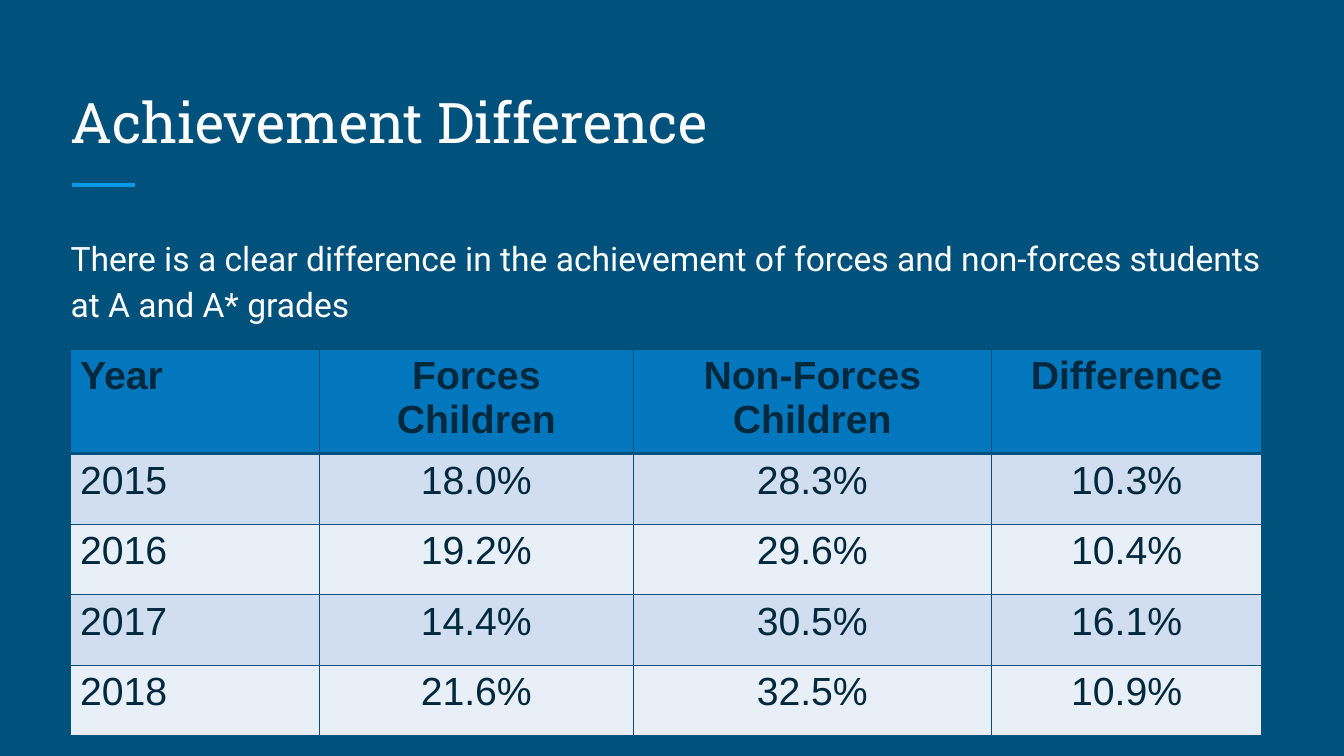
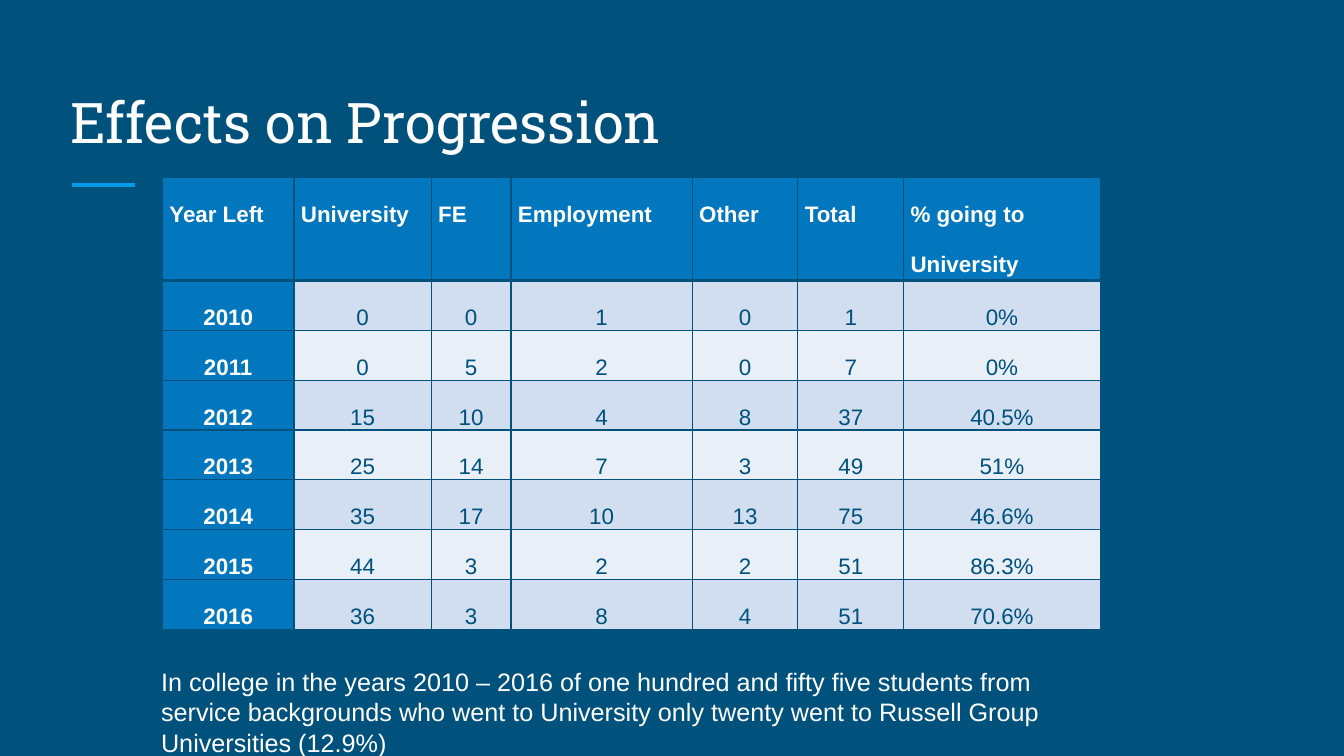
"""Build two slides on forces children: achievement and progression."""
from lxml.etree import SubElement
from pptx import Presentation
from pptx.dml.color import RGBColor
from pptx.enum.shapes import MSO_CONNECTOR
from pptx.enum.text import MSO_ANCHOR, MSO_AUTO_SIZE, PP_ALIGN
from pptx.oxml.ns import qn
from pptx.util import Pt

NAVY = RGBColor(0x00, 0x51, 0x7C)
DARK = RGBColor(0x00, 0x29, 0x3E)
BLUE = RGBColor(0x02, 0x77, 0xBD)
SKY = RGBColor(0x03, 0x9B, 0xE5)
WHITE = RGBColor(0xFF, 0xFF, 0xFF)
BANDS = [RGBColor(0xE9, 0xEF, 0xF7), RGBColor(0xD0, 0xDE, 0xEF)]


def write(frame, text, size=18, font="Arial", color=WHITE, bold=False,
          align=PP_ALIGN.LEFT, space=1.0, inset=None):
    frame.word_wrap = True
    if inset is not None:
        frame.margin_left = frame.margin_right = Pt(inset)
        frame.margin_top = frame.margin_bottom = Pt(inset)
    par = frame.paragraphs[0]
    par.alignment = align
    par.line_spacing = space
    run = par.add_run()
    run.text = text
    run.font.size = Pt(size)
    run.font.name = font
    run.font.bold = bold
    run.font.color.rgb = color


def grid(slide, left, top, widths, heights, rows, ink, head, side, pad, **form):
    shape = slide.shapes.add_table(len(rows), len(widths), Pt(left), Pt(top),
                                   Pt(sum(widths)), Pt(sum(heights)))
    table = shape.table
    table.horz_banding = False
    for col, width in zip(table.columns, widths):
        col.width = Pt(width)
    for r, (row, height) in enumerate(zip(rows, heights)):
        table.rows[r].height = Pt(height)
        for c, text in enumerate(row):
            cell = table.cell(r, c)
            cell.margin_left = cell.margin_right = Pt(pad[0])
            cell.margin_top = cell.margin_bottom = Pt(pad[1])
            props = cell._tc.get_or_add_tcPr()
            for edge in "LRTB":
                thick = (edge, r) in [("B", 0), ("T", 1)]
                line = SubElement(props, qn("a:ln" + edge), w=str(Pt(3 if thick else 1)))
                fill = SubElement(line, qn("a:solidFill"))
                SubElement(fill, qn("a:srgbClr"), val=str(NAVY))
            strong = r == 0 or (side and c == 0)
            cell.fill.solid()
            cell.fill.fore_color.rgb = BLUE if strong else BANDS[r % 2]
            plain = (r == 0) if side else (c == 0)
            write(cell.text_frame, text, color=head if strong else ink, bold=strong,
                  align=PP_ALIGN.LEFT if plain else PP_ALIGN.CENTER, **form)


deck = Presentation()
deck.slide_width, deck.slide_height = Pt(960), Pt(540)
layout = deck.slide_layouts[5]
layout.background.fill.solid()
layout.background.fill.fore_color.rgb = NAVY

slides = []
for name in ["Achievement Difference", "Effects on Progression"]:
    slide = deck.slides.add_slide(layout)
    title = slide.shapes.title
    title.left, title.top, title.width, title.height = Pt(41), Pt(48), Pt(878), Pt(72)
    title.text_frame.auto_size = MSO_AUTO_SIZE.NONE
    title.text_frame.vertical_anchor = MSO_ANCHOR.BOTTOM
    write(title.text_frame, name, size=40, font="Roboto Slab", inset=9.5)
    rule = slide.shapes.add_connector(MSO_CONNECTOR.STRAIGHT, Pt(51.5), Pt(132.3),
                                      Pt(96.5), Pt(132.3))
    rule.line.color.rgb = SKY
    rule.line.width = Pt(3)
    SubElement(rule._element.spPr, qn("a:effectLst"))
    slides.append(slide)
grades, leavers = slides

intro = grades.shapes.add_textbox(Pt(41), Pt(156), Pt(878), Pt(323))
write(intro.text_frame, "There is a clear difference in the achievement of forces and "
      "non-forces students at A and A* grades", size=24, font="Roboto", space=1.15, inset=9.5)

scores = [
    ["Year", "Forces Children", "Non-Forces Children", "Difference"],
    ["2015", "18.0%", "28.3%", "10.3%"],
    ["2016", "19.2%", "29.6%", "10.4%"],
    ["2017", "14.4%", "30.5%", "16.1%"],
    ["2018", "21.6%", "32.5%", "10.9%"],
]
grid(grades, 50, 249.5, [178, 224.5, 255.5, 193.5], [69] + [50.4] * 4, scores,
     ink=DARK, head=DARK, side=False, pad=(7.2, 3.6), size=28)

paths = [
    ["Year Left", "University", "FE", "Employment", "Other", "Total", "% going to University"],
    ["2010", "0", "0", "1", "0", "1", "0%"],
    ["2011", "0", "5", "2", "0", "7", "0%"],
    ["2012", "15", "10", "4", "8", "37", "40.5%"],
    ["2013", "25", "14", "7", "3", "49", "51%"],
    ["2014", "35", "17", "10", "13", "75", "46.6%"],
    ["2015", "44", "3", "2", "2", "51", "86.3%"],
    ["2016", "36", "3", "8", "4", "51", "70.6%"],
]
grid(leavers, 116, 127, [94, 98, 57, 129.5, 75.5, 75.5, 140.5], [73.4] + [35.6] * 7, paths,
     ink=NAVY, head=WHITE, side=True, pad=(5, 0), size=16, space=2.0)

note = leavers.shapes.add_textbox(Pt(108), Pt(472.5), Pt(679), Pt(72.7))
write(note.text_frame, "In college in the years 2010 – 2016 of one hundred and fifty five "
      "students from service backgrounds who went to University only twenty went to "
      "Russell Group Universities (12.9%)")

deck.save("out.pptx")
